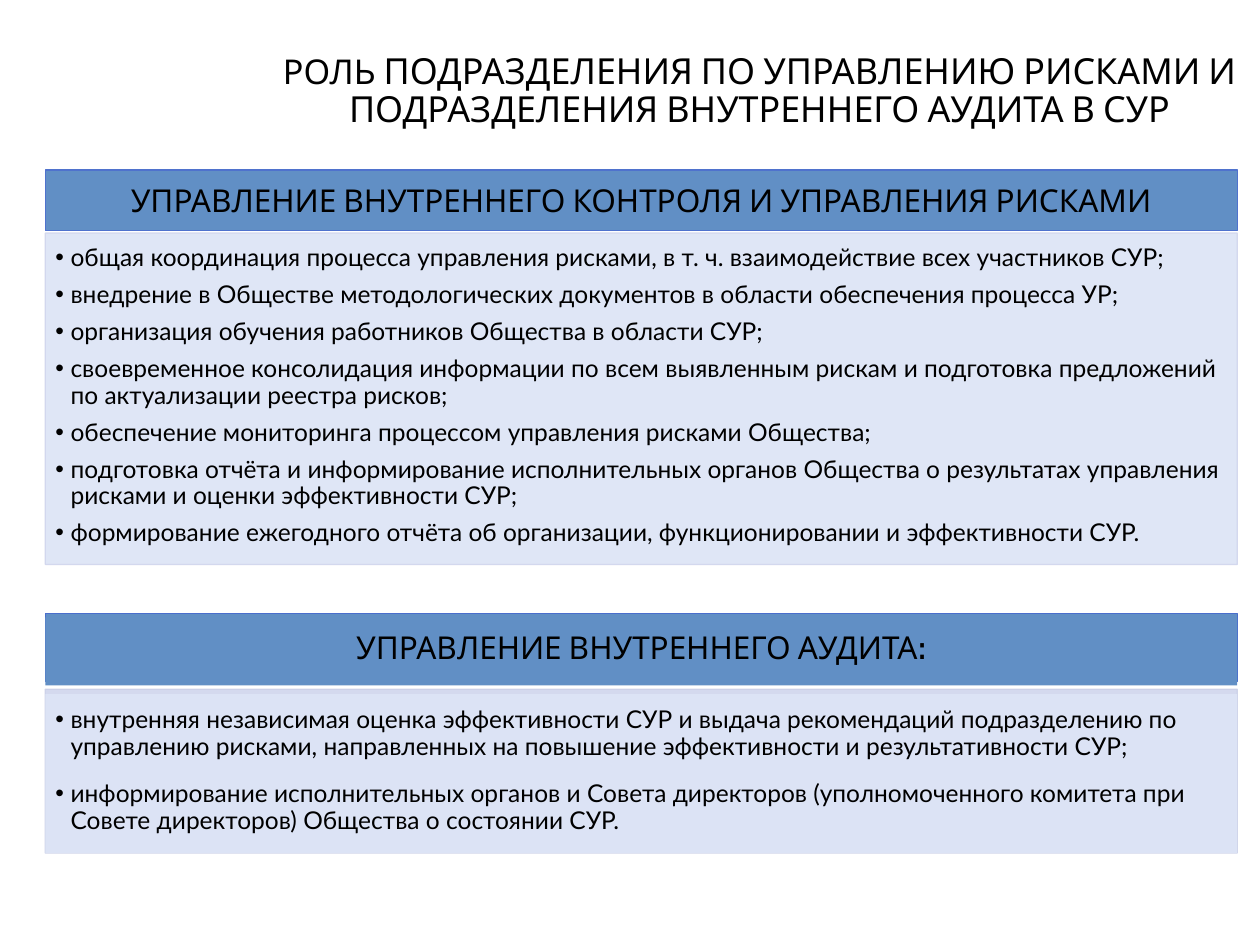
import pptx
import pptx.dml.color
import pptx.enum.shapes
import pptx.enum.text
import pptx.oxml.ns
import pptx.util
from lxml import etree

Inches = pptx.util.Inches
Pt = pptx.util.Pt
Align = pptx.enum.text.PP_ALIGN
Anchor = pptx.enum.text.MSO_ANCHOR

COLORS = {
    "text": "000000",
    "heading": "618FC5",
    "risk_heading_line": "4F72CD",
    "audit_heading_line": "4A6ECC",
    "risk_list": "DFE6F6",
    "risk_list_line": "D0D5ED",
    "audit_list": "DCE3F5",
    "audit_list_back": "D0D5ED",
    "audit_list_line": "CBD0E8",
}
LEFT, WIDTH = 0.36, 9.46
TITLE_INSETS = (0.1, 0.05, 0.1, 0.05)
HEADING_INSETS = (0.14, 0.12, 0.14, 0.08)
LIST_INSETS = (0.08, 0.08, 0.11, 0.12)
LIST_INDENT = 0.12

TITLE_LINES = [
    [("РОЛЬ ", 19.5), ("ПОДРАЗДЕЛЕНИЯ ПО УПРАВЛЕНИЮ РИСКАМИ И", 20.5)],
    [("ПОДРАЗДЕЛЕНИЯ ВНУТРЕННЕГО АУДИТА В СУР", 20.5)],
]
RISK_HEADING = "УПРАВЛЕНИЕ ВНУТРЕННЕГО КОНТРОЛЯ И УПРАВЛЕНИЯ РИСКАМИ"
RISK_ITEMS = [
    "общая координация процесса управления рисками, в т. ч. взаимодействие всех участников СУР;",
    "внедрение в Обществе методологических документов в области обеспечения процесса УР;",
    "организация обучения работников Общества в области СУР;",
    "своевременное консолидация информации по всем выявленным рискам и подготовка предложений "
    "по актуализации реестра рисков;",
    "обеспечение мониторинга процессом управления рисками Общества;",
    "подготовка отчёта и информирование исполнительных органов Общества о результатах управления "
    "рисками и оценки эффективности СУР;",
    "формирование ежегодного отчёта об организации, функционировании и эффективности СУР.",
]
AUDIT_HEADING = "УПРАВЛЕНИЕ ВНУТРЕННЕГО АУДИТА"
AUDIT_ITEMS = [
    "внутренняя независимая оценка эффективности СУР и выдача рекомендаций подразделению по "
    "управлению рисками, направленных на повышение эффективности и результативности СУР;",
    "информирование исполнительных органов и Совета директоров (уполномоченного комитета при "
    "Совете директоров) Общества о состоянии СУР.",
]


def apply(target, values):
    """Set each attribute of the target from a dict of values."""
    for name, value in values.items():
        setattr(target, name, value)


def place(shape, box):
    """Move a shape to a box given as left, top, width, height in inches."""
    names = ("left", "top", "width", "height")
    apply(shape, {name: Inches(length) for name, length in zip(names, box)})


def paint(shape, fill, line=None, alpha=None, line_alpha=None):
    """Fill and outline a shape, with optional opacity in percent."""
    shape.fill.solid()
    formats = [(shape.fill, fill, alpha)]
    if line:
        shape.line.width = Pt(0.75)
        shape.line.fill.solid()
        formats.append((shape.line.fill, line, line_alpha))
    else:
        shape.line.fill.background()
    for paint_fill, color, opacity in formats:
        paint_fill.fore_color.rgb = pptx.dml.color.RGBColor.from_string(COLORS[color])
    for color_node, (_, _, opacity) in zip(
        shape.element.spPr.iter(pptx.oxml.ns.qn("a:srgbClr")), formats
    ):
        if opacity:
            etree.SubElement(color_node, pptx.oxml.ns.qn("a:alpha"), val=str(opacity * 1000))


def set_frame(shape, anchor, insets):
    """Prepare the text frame of a shape and return it."""
    frame = shape.text_frame
    sides = ("margin_left", "margin_top", "margin_right", "margin_bottom")
    apply(frame, {side: Inches(inset) for side, inset in zip(sides, insets)})
    apply(frame, {
        "word_wrap": True,
        "auto_size": pptx.enum.text.MSO_AUTO_SIZE.NONE,
        "vertical_anchor": anchor,
    })
    return frame


def add_para(frame, index, align, before=0, after=0):
    """Return the paragraph at the index, added when it is not the first."""
    para = frame.add_paragraph() if index else frame.paragraphs[0]
    apply(para, {
        "alignment": align,
        "line_spacing": 0.9,
        "space_before": Pt(before if index else 0),
        "space_after": Pt(after),
    })
    return para


def add_span(para, text, size, font, bold=False):
    """Add a formatted run to a paragraph."""
    span = para.add_run()
    span.text = text
    apply(span.font, {"size": Pt(size), "name": font, "bold": bold})
    span.font.color.rgb = pptx.dml.color.RGBColor.from_string(COLORS["text"])


def add_bullet(para):
    """Give a paragraph a round bullet with a hanging indent."""
    properties = para._p.get_or_add_pPr()
    properties.set("marL", str(Inches(LIST_INDENT)))
    properties.set("indent", str(-Inches(LIST_INDENT)))
    etree.SubElement(properties, pptx.oxml.ns.qn("a:buFont"), typeface="Arial")
    etree.SubElement(properties, pptx.oxml.ns.qn("a:buChar"), char="•")


def add_backing(page, front, box, **colors):
    """Draw a plain rectangle just behind the front shape."""
    backing = page.shapes.add_shape(
        pptx.enum.shapes.MSO_SHAPE.RECTANGLE, *map(Inches, box)
    )
    backing.shadow.inherit = False
    paint(backing, **colors)
    front.element.addprevious(backing.element)


def fill_title(title, box):
    """Write the slide title in its box."""
    place(title, box)
    frame = set_frame(title, Anchor.MIDDLE, TITLE_INSETS)
    for index, line in enumerate(TITLE_LINES):
        para = add_para(frame, index, Align.CENTER)
        for text, size in line:
            add_span(para, text, size, "Cabin")


def fill_heading(heading, box, text):
    """Write a section heading in its box and return its paragraph."""
    place(heading, box)
    frame = set_frame(heading, Anchor.TOP, HEADING_INSETS)
    para = add_para(frame, 0, Align.CENTER)
    add_span(para, text, 18, "Cabin")
    return para


def fill_list(body, box, items, before=0):
    """Write a bulleted list in its box."""
    place(body, box)
    frame = set_frame(body, Anchor.MIDDLE, LIST_INSETS)
    for index, item in enumerate(items):
        para = add_para(frame, index, Align.LEFT, before, after=6)
        add_bullet(para)
        add_span(para, item, 14, "Lato")


def build_risk_section(heading, body, top):
    """Build the risk management section from the given top."""
    fill_heading(heading, (LEFT, top, WIDTH, 0.48), RISK_HEADING)
    paint(heading, "heading", "risk_heading_line")
    fill_list(body, (LEFT, top + 0.5, WIDTH, 2.63), RISK_ITEMS)
    paint(body, "risk_list", "risk_list_line", line_alpha=90)


def build_audit_section(page, heading, body, top):
    """Build the internal audit section from the given top."""
    para = fill_heading(heading, (LEFT, top + 0.03, WIDTH, 0.54), AUDIT_HEADING)
    add_span(para, ":", 18, "Arial Narrow", bold=True)
    paint(heading, "heading")
    add_backing(page, heading, (LEFT, top, WIDTH, 0.54),
                fill="heading", line="audit_heading_line")
    fill_list(body, (LEFT, top + 0.64, WIDTH, 1.26), AUDIT_ITEMS, before=6)
    paint(body, "audit_list")
    add_backing(page, body, (LEFT, top + 0.6, WIDTH, 1.3), fill="audit_list_back",
                line="audit_list_line", alpha=90, line_alpha=90)


def main():
    """Build the slide and save the deck."""
    deck = pptx.Presentation()
    apply(deck, {"slide_width": Inches(10), "slide_height": Inches(7.5)})
    page = deck.slides.add_slide(deck.slide_layouts.get_by_name("Comparison"))
    title, risk_heading, risk_list, audit_heading, audit_list = list(page.placeholders)[:5]
    fill_title(title, (2.06, 0.36, 7.94, 0.74))
    build_risk_section(risk_heading, risk_list, 1.35)
    build_audit_section(page, audit_heading, audit_list, 4.87)
    deck.save("out.pptx")


if __name__ == "__main__":
    main()
